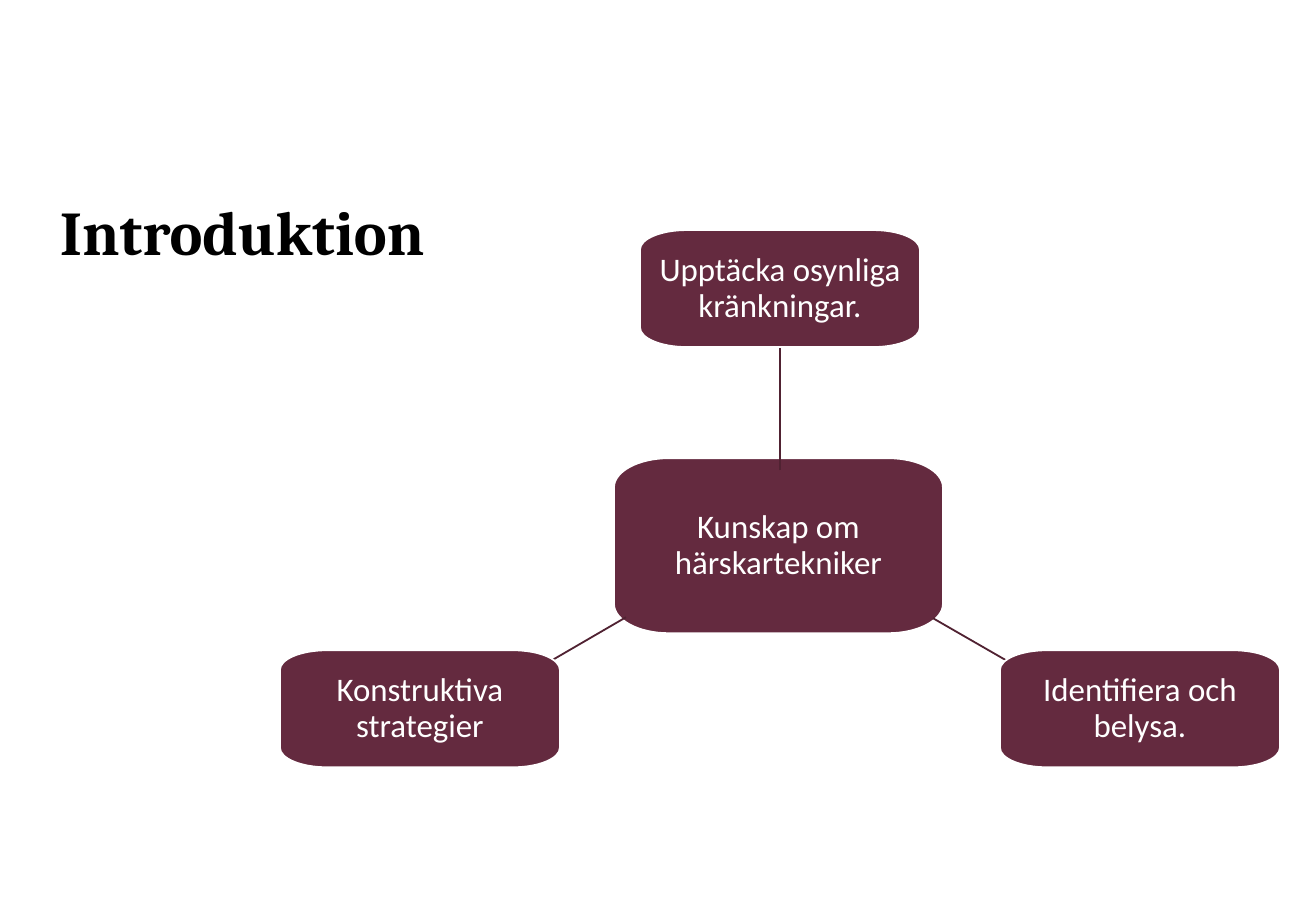
from dataclasses import dataclass

from lxml.etree import SubElement
from pptx import Presentation
from pptx.dml.color import RGBColor
from pptx.enum.shapes import MSO_CONNECTOR
from pptx.enum.text import MSO_ANCHOR, MSO_AUTO_SIZE, PP_ALIGN
from pptx.oxml.ns import qn
from pptx.util import Inches, Pt

EMU_PER_PX = 914400 / 131.6
ARC = 0.55  # share of the way to the corner for the handles of a quarter ellipse


@dataclass(frozen=True)
class Theme:
    title_font: str = "Cambria"
    body_font: str = "Calibri"
    title_size: int = 34
    body_size: int = 18
    line_width: int = 1
    black: RGBColor = RGBColor(0x00, 0x00, 0x00)
    white: RGBColor = RGBColor(0xFF, 0xFF, 0xFF)
    plum: RGBColor = RGBColor(0x64, 0x2A, 0x3F)
    spoke: RGBColor = RGBColor(0x50, 0x22, 0x32)


THEME = Theme()


def px(length):
    return round(length * EMU_PER_PX)


def write_text(frame, text, font_name, size, color, align, anchor, inset, bold=False):
    frame.word_wrap = True
    frame.auto_size = MSO_AUTO_SIZE.NONE
    frame.vertical_anchor = anchor
    frame.margin_left = frame.margin_right = px(inset)
    frame.margin_top = frame.margin_bottom = px(inset)
    paragraph = frame.paragraphs[0]
    paragraph.alignment = align
    paragraph.line_spacing = 0.9
    paragraph.space_before = Pt(0)
    run = paragraph.add_run()
    run.text = text
    run.font.name = font_name
    run.font.size = Pt(size)
    run.font.bold = bold
    run.font.color.rgb = color


def add_title(slide, text):
    title = slide.shapes.title
    title.left, title.top, title.width, title.height = px(60), px(190), px(479), px(79)
    write_text(title.text_frame, text, THEME.title_font, THEME.title_size,
               THEME.black, PP_ALIGN.LEFT, MSO_ANCHOR.BOTTOM, 0, bold=True)


def cut_corner_outline(left, top, width, height):
    """Eight points, clockwise, that cut a sixth of each side off every corner."""
    right, bottom = left + width, top + height
    cut_x, cut_y = width / 6, height / 6
    points = [
        (left, top + cut_y), (left + cut_x, top),
        (right - cut_x, top), (right, top + cut_y),
        (right, bottom - cut_y), (right - cut_x, bottom),
        (left + cut_x, bottom), (left, bottom - cut_y),
    ]
    return [(px(x), px(y)) for x, y in points]


def toward(point, corner):
    return tuple(round(a + (b - a) * ARC) for a, b in zip(point, corner))


def round_corners(shape):
    """Turn the cut of each corner into a quarter ellipse."""
    geometry = shape._element.spPr.find(qn("a:custGeom"))
    segments = [*geometry.iter(qn("a:moveTo")), *geometry.iter(qn("a:lnTo"))]
    ends = [(int(segment[0].get("x")), int(segment[0].get("y"))) for segment in segments]
    for index in range(1, len(segments), 2):
        start, end = ends[index - 1], ends[index]
        leaves_upright = index % 4 == 1
        corner = (start[0], end[1]) if leaves_upright else (end[0], start[1])
        segment = segments[index]
        curve = segment.makeelement(qn("a:cubicBezTo"))
        for x, y in (toward(start, corner), toward(end, corner), end):
            SubElement(curve, qn("a:pt"), x=str(x), y=str(y))
        segment.getparent().replace(segment, curve)


def add_topic(slide, text, left, top, width, height, inset):
    start, *rest = cut_corner_outline(left, top, width, height)
    builder = slide.shapes.build_freeform(*start)
    builder.add_line_segments(rest, close=True)
    topic = builder.convert_to_shape()
    round_corners(topic)
    topic.shadow.inherit = False
    topic.fill.solid()
    topic.fill.fore_color.rgb = THEME.plum
    topic.line.color.rgb = THEME.white
    topic.line.width = Pt(THEME.line_width)
    write_text(topic.text_frame, text, THEME.body_font, THEME.body_size,
               THEME.white, PP_ALIGN.CENTER, MSO_ANCHOR.MIDDLE, inset)


def add_spoke(slide, start, end):
    spoke = slide.shapes.add_connector(
        MSO_CONNECTOR.STRAIGHT, *map(px, start), *map(px, end))
    spoke.line.color.rgb = THEME.spoke
    spoke.line.width = Pt(THEME.line_width)
    SubElement(spoke._element.spPr, qn("a:effectLst"))


def main():
    presentation = Presentation()
    presentation.slide_width = Inches(10)
    presentation.slide_height = Inches(6.95)
    slide = presentation.slides.add_slide(presentation.slide_layouts[5])

    add_title(slide, "Introduktion")
    add_topic(slide, "Kunskap om härskartekniker", 614, 458, 329, 175, inset=20)

    middle, spread, lower = 640, 360, 650
    branches = [
        ("Upptäcka osynliga kränkningar.", middle, 230, (780, 470), (780, 347)),
        ("Identifiera och belysa.", middle + spread, lower, (933, 618), (1020, 668)),
        ("Konstruktiva strategier", middle - spread, lower, (626, 617), (540, 667)),
    ]
    for text, left, top, spoke_start, spoke_end in branches:
        add_spoke(slide, spoke_start, spoke_end)
        add_topic(slide, text, left, top, 280, 117, inset=13)

    presentation.save("out.pptx")


if __name__ == "__main__":
    main()
